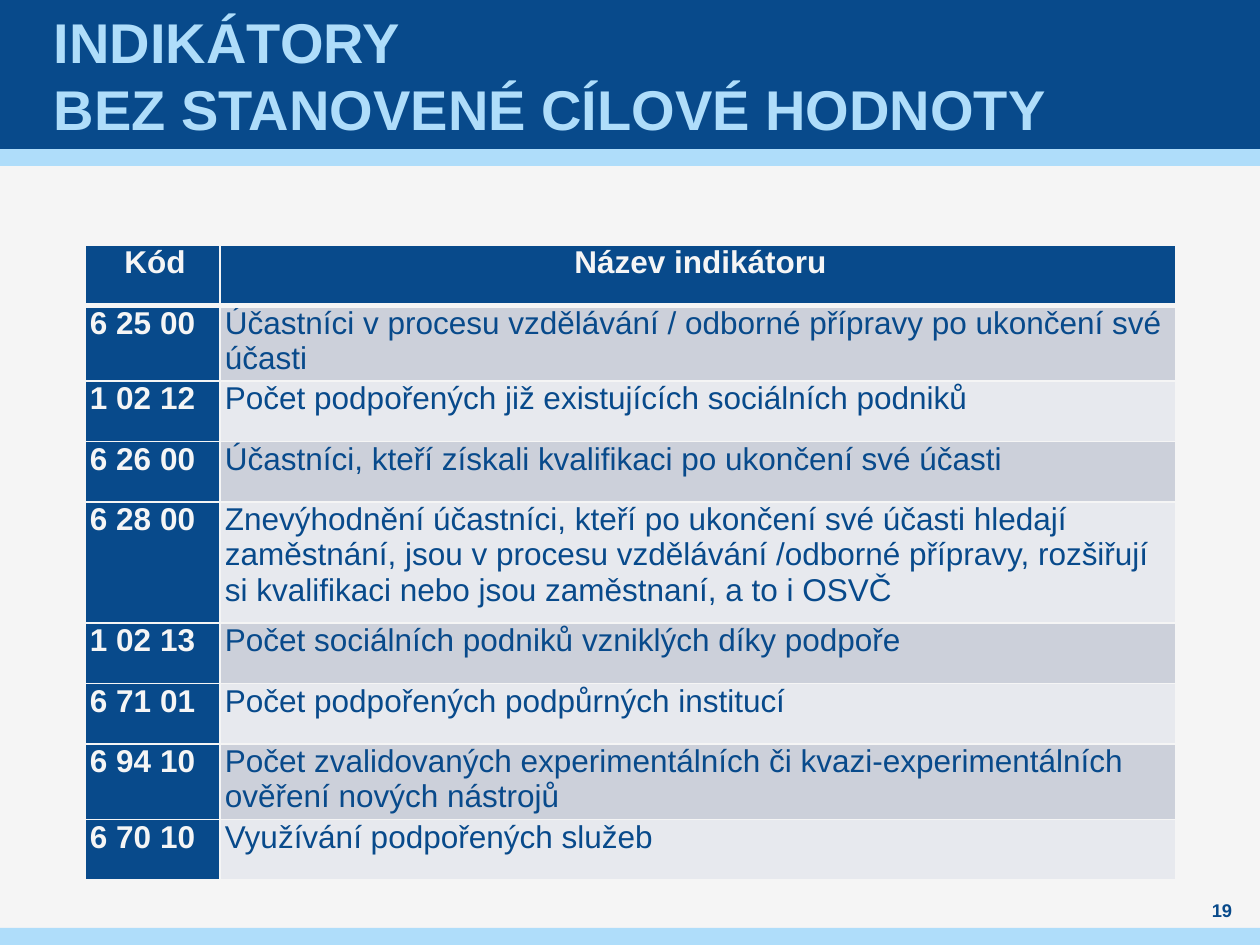
from lxml import etree
from pptx import Presentation
from pptx.dml.color import RGBColor
from pptx.enum.shapes import MSO_SHAPE
from pptx.enum.text import MSO_ANCHOR, PP_ALIGN
from pptx.oxml.ns import qn
from pptx.util import Emu, Pt

RECT = MSO_SHAPE.RECTANGLE
MIDDLE = MSO_ANCHOR.MIDDLE
LEFT, CENTER = PP_ALIGN.LEFT, PP_ALIGN.CENTER

COLORS = {
    "navy": "084A8B",
    "sky": "AFDDFA",
    "paper": "F5F5F5",
    "band_dark": "CCD0DA",
    "band_light": "E7E9EE",
}
TITLE = ["INDIKÁTORY", "BEZ STANOVENÉ CÍLOVÉ HODNOTY"]
HEADER = ("Kód", "Název indikátoru")
# Code, name, height in row units
INDICATORS = [
    ("6 25 00", "Účastníci v procesu vzdělávání / odborné přípravy po ukončení své účasti", 1),
    ("1 02 12", "Počet podpořených již existujících sociálních podniků", 1),
    ("6 26 00", "Účastníci, kteří získali kvalifikaci po ukončení své účasti", 1),
    ("6 28 00", "Znevýhodnění účastníci, kteří po ukončení své účasti hledají zaměstnání, "
                "jsou v procesu vzdělávání /odborné přípravy, rozšiřují si kvalifikaci "
                "nebo jsou zaměstnaní, a to i OSVČ", 2),
    ("1 02 13", "Počet sociálních podniků vzniklých díky podpoře", 1),
    ("6 71 01", "Počet podpořených podpůrných institucí", 1),
    ("6 94 10", "Počet zvalidovaných experimentálních či kvazi-experimentálních "
                "ověření nových nástrojů", 1),
    ("6 70 10", "Využívání podpořených služeb", 1),
]


def px(n):
    return Emu(n * 914400 // 126)


def rgb(name):
    return RGBColor.from_string(COLORS[name])


class Deck:
    font = "Arial"

    def __init__(self, width, height):
        self.prs = Presentation()
        self.prs.slide_width, self.prs.slide_height = px(width), px(height)
        self.s = self.prs.slides.add_slide(self.prs.slide_layouts[6])
        fill = self.s.background.fill
        fill.solid()
        fill.fore_color.rgb = rgb("paper")

    def bar(self, x, y, w, h, color):
        sp = self.s.shapes.add_shape(RECT, px(x), px(y), px(w), px(h))
        sp.shadow.inherit = False
        sp.fill.solid()
        sp.fill.fore_color.rgb = rgb(color)
        sp.line.fill.background()

    def run(self, p, text, size, color, bold):
        r = p.add_run()
        r.text = text
        r.font.name, r.font.size, r.font.bold = self.font, Pt(size), bold
        r.font.color.rgb = rgb(color)

    def text(self, x, y, w, h, lines, size, color, align=LEFT, inset=0):
        tf = self.s.shapes.add_textbox(px(x), px(y), px(w), px(h)).text_frame
        tf.word_wrap = True
        tf.vertical_anchor = MIDDLE
        tf.margin_left = tf.margin_right = px(inset)
        tf.margin_top = tf.margin_bottom = 0
        p = tf.paragraphs[0]
        p.alignment = align
        for i, line in enumerate(lines):
            if i:
                p.add_line_break()
            self.run(p, line, size, color, True)

    def border(self, cell, side, width):
        tcPr = cell._tc.get_or_add_tcPr()
        ln = etree.SubElement(tcPr, qn("a:ln" + side), w=str(Pt(width)))
        fill = etree.SubElement(ln, qn("a:solidFill"))
        etree.SubElement(fill, qn("a:srgbClr"), val=COLORS["paper"])

    def cell(self, cell, text, fill, color, bold, align=LEFT, top=1, bottom=1):
        for side, width in (("L", 1), ("R", 1), ("T", top), ("B", bottom)):
            self.border(cell, side, width)
        cell.fill.solid()
        cell.fill.fore_color.rgb = rgb(fill)
        cell.margin_left = cell.margin_right = 0
        cell.margin_top = cell.margin_bottom = 0
        p = cell.text_frame.paragraphs[0]
        p.alignment = align
        p.space_before = Pt(3)
        p._p.get_or_add_pPr().set("marL", str(px(5)))
        self.run(p, text, 18, color, bold)

    def table(self, x, y, widths, height, header, rows):
        units = [1] + [row[2] for row in rows]
        table = self.s.shapes.add_table(
            len(units), len(widths), px(x), px(y), px(sum(widths)), px(height)).table
        for col, width in zip(table.columns, widths):
            col.width = px(width)
        for row, unit in zip(table.rows, units):
            row.height = px(height) * unit // sum(units)
        for j, label in enumerate(header):
            self.cell(table.cell(0, j), label, "navy", "paper", True, CENTER, bottom=3)
        for i, (code, name, _) in enumerate(rows, 1):
            top = 3 if i == 1 else 1
            band = "band_dark" if i % 2 else "band_light"
            self.cell(table.cell(i, 0), code, "navy", "paper", True, top=top)
            self.cell(table.cell(i, 1), name, band, "navy", False, top=top)


def main():
    deck = Deck(1260, 945)

    # Header and footer bands
    deck.bar(0, 149, 1260, 17, "sky")
    deck.bar(0, 0, 1260, 149, "navy")
    deck.bar(0, 928, 1260, 17, "sky")

    # Title and page number
    deck.text(49, 0, 1160, 149, TITLE, 32, "sky", inset=5)
    deck.text(1190, 898, 64, 25, ["19"], 10.5, "navy", CENTER)

    # Indicator table
    deck.table(85, 245, [135, 956], 605, HEADER, INDICATORS)

    deck.prs.save("out.pptx")


if __name__ == "__main__":
    main()
